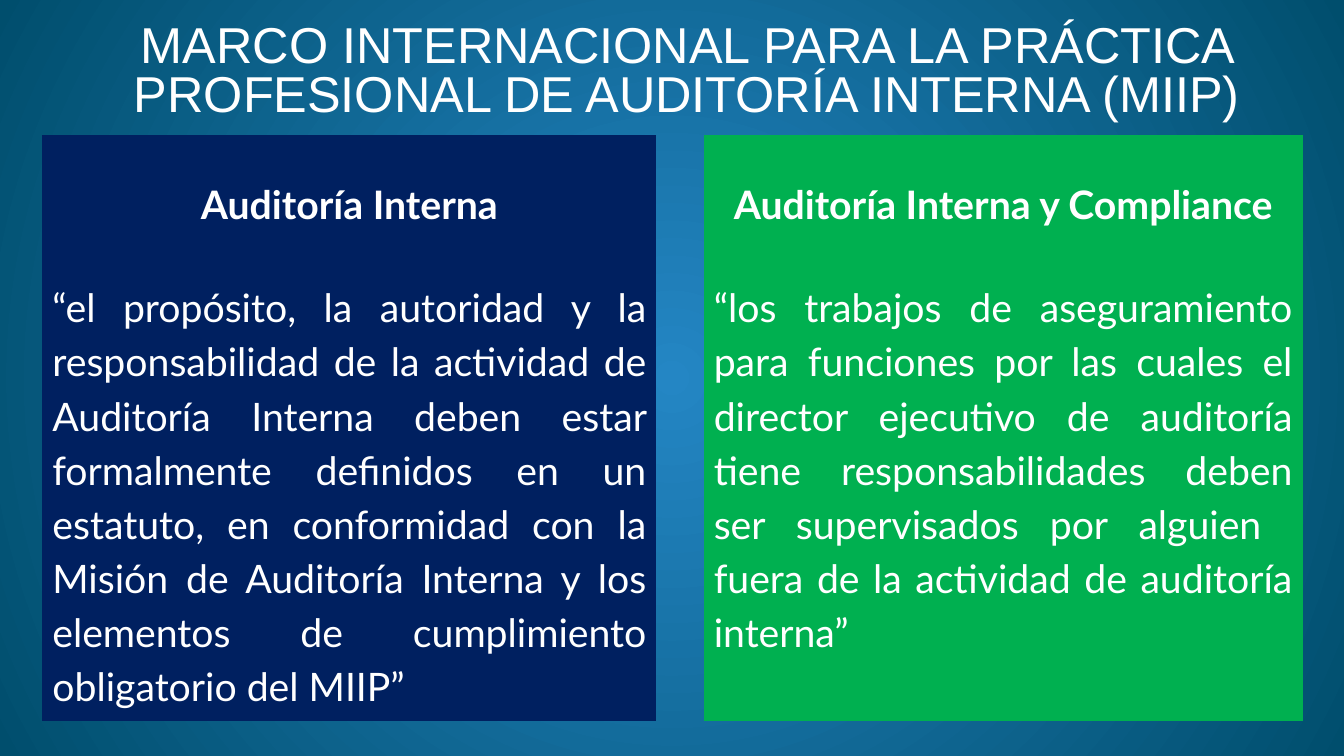
import lxml.etree
import pptx
import pptx.dml.color
import pptx.enum.text
import pptx.oxml.ns
import pptx.util

TITLE = "MARCO INTERNACIONAL PARA LA PRÁCTICA PROFESIONAL DE AUDITORÍA INTERNA (MIIP)"
PANELS = [
    {
        "column": 0,
        "fill": "navy",
        "heading": "Auditoría Interna",
        "quote": "“el propósito, la autoridad y la responsabilidad de la actividad de Auditoría Interna deben estar formalmente definidos en un estatuto, en conformidad con la Misión de Auditoría Interna y los elementos de cumplimiento obligatorio del MIIP”",
    },
    {
        "column": 2,
        "fill": "green",
        "heading": "Auditoría Interna y Compliance",
        "quote": "“los trabajos de aseguramiento para funciones por las cuales el director ejecutivo de auditoría tiene responsabilidades deben ser supervisados por alguien  fuera de la actividad de auditoría interna”",
    },
]

THEME = {
    "navy": "002060",
    "green": "00B050",
    "text": "FFFFFF",
    "background": ["2486C4", "004E6D"],
    "title_font": "Arial",
    "body_font": "Lato",
    "title_size": 36,
    "body_size": 28,
}

WIDTH, HEIGHT = 13.33, 7.5
TITLE_BOX = {"left": 0.42, "top": 0.24, "width": 12.79, "height": 0.98}
TABLE_LEFT, TABLE_TOP = 0.42, 1.34
COLUMNS = [6.09, 0.47, 5.94]
ROWS = [1.31, 4.5]
PLAIN_TABLE_STYLE = "{2D5ABB26-0587-4C30-8999-92F81FD0307C}"
MARGINS = ["margin_left", "margin_top", "margin_right", "margin_bottom"]

Inches = pptx.util.Inches
Pt = pptx.util.Pt
ALIGN = pptx.enum.text.PP_ALIGN
ANCHOR = pptx.enum.text.MSO_ANCHOR


def rgb(value):
    return pptx.dml.color.RGBColor.from_string(value)


def apply(target, values):
    for name, value in values.items():
        setattr(target, name, value)


def write(frame, text, font, paragraph_format):
    paragraph = frame.paragraphs[0]
    apply(paragraph, paragraph_format)
    run = paragraph.add_run()
    run.text = text
    apply(run.font, font)
    run.font.color.rgb = rgb(THEME["text"])


def paint_background(slide):
    fill = slide.background.fill
    fill.gradient()
    for stop, color, position in zip(fill.gradient_stops, THEME["background"], [0, 1]):
        stop.color.rgb = rgb(color)
        stop.position = position
    qn = pptx.oxml.ns.qn
    linear = next(slide.background._cSld.iter(qn("a:lin")))
    gradient = linear.getparent()
    gradient.remove(linear)
    circle = lxml.etree.SubElement(gradient, qn("a:path"), {"path": "circle"})
    center = dict.fromkeys("ltrb", "50000")
    lxml.etree.SubElement(circle, qn("a:fillToRect"), center)


def add_title(slide):
    title = slide.shapes.title
    apply(title, {name: Inches(value) for name, value in TITLE_BOX.items()})
    frame = title.text_frame
    apply(frame, dict(zip(MARGINS, map(Inches, [0.12, 0.06, 0.12, 0.06]))))
    apply(frame, {
        "word_wrap": True,
        "vertical_anchor": ANCHOR.MIDDLE,
        "auto_size": pptx.enum.text.MSO_AUTO_SIZE.NONE,
    })
    font = {"name": THEME["title_font"], "size": Pt(THEME["title_size"]), "bold": False}
    write(frame, TITLE, font, {"alignment": ALIGN.CENTER, "line_spacing": 0.8})


def add_panels(slide):
    frame = slide.shapes.add_table(
        len(ROWS), len(COLUMNS), Inches(TABLE_LEFT), Inches(TABLE_TOP),
        Inches(sum(COLUMNS)), Inches(sum(ROWS)),
    )
    table = frame.table
    apply(table, {"first_row": False, "horz_banding": False})
    next(table._tbl.iter(pptx.oxml.ns.qn("a:tableStyleId"))).text = PLAIN_TABLE_STYLE
    for column, width in zip(table.columns, COLUMNS):
        column.width = Inches(width)
    for row, height in zip(table.rows, ROWS):
        row.height = Inches(height)
    for cell in table.iter_cells():
        cell.fill.background()
        apply(cell, dict.fromkeys(MARGINS, Inches(0.1)))

    row_formats = [
        ("heading", True, ALIGN.CENTER, ANCHOR.MIDDLE),
        ("quote", False, ALIGN.JUSTIFY, ANCHOR.TOP),
    ]
    for panel in PANELS:
        for row, (part, bold, alignment, anchor) in enumerate(row_formats):
            cell = table.cell(row, panel["column"])
            cell.fill.solid()
            cell.fill.fore_color.rgb = rgb(THEME[panel["fill"]])
            cell.vertical_anchor = anchor
            font = {"name": THEME["body_font"], "size": Pt(THEME["body_size"]), "bold": bold}
            spacing = {"alignment": alignment, "line_spacing": 1.15, "space_before": Pt(7)}
            write(cell.text_frame, panel[part], font, spacing)


def main():
    presentation = pptx.Presentation()
    apply(presentation, {"slide_width": Inches(WIDTH), "slide_height": Inches(HEIGHT)})
    slide = presentation.slides.add_slide(presentation.slide_layouts[5])
    paint_background(slide)
    add_title(slide)
    add_panels(slide)
    presentation.save("out.pptx")


if __name__ == "__main__":
    main()
